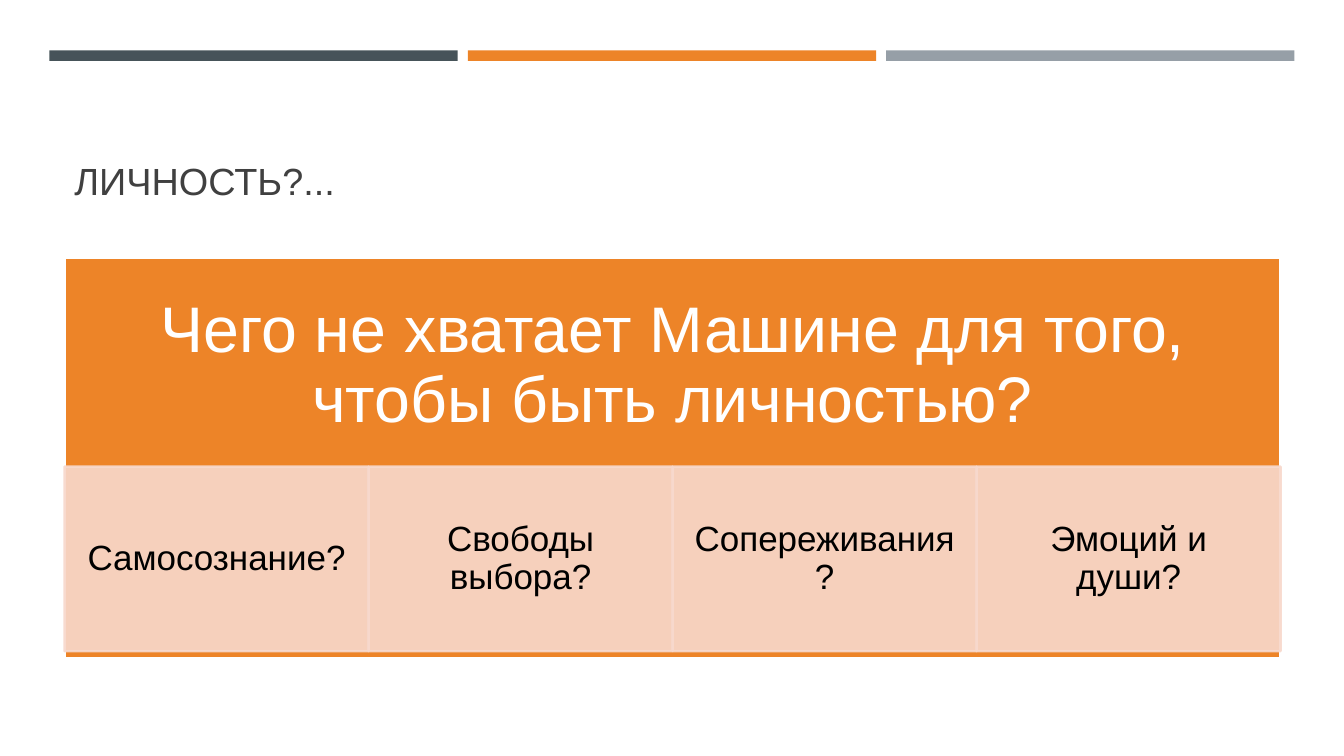
from lxml.etree import SubElement
from pptx import Presentation
from pptx.dml.color import RGBColor
from pptx.enum.shapes import MSO_SHAPE
from pptx.enum.text import MSO_ANCHOR, PP_ALIGN
from pptx.oxml.ns import qn
from pptx.util import Inches, Pt


def color(hex_code):
    return RGBColor.from_string(hex_code)


def set_alpha(element, percent):
    """Make the solid colours inside an element partly transparent."""
    for rgb in element.iter(qn("a:srgbClr")):
        SubElement(rgb, qn("a:alpha")).set("val", str(percent * 1000))


class SlideBuilder:
    """Places elements by percent of the slide's width and height."""

    font = "Arial"
    slate, orange, grey = "465359", "ED8428", "969FA7"
    peach, white, black, charcoal = "F8D9CD", "FFFFFF", "000000", "404040"

    def __init__(self, deck):
        self.deck = deck
        self.slide = deck.slides.add_slide(deck.slide_layouts[6])

    def area(self, left, top, width, height):
        across, down = self.deck.slide_width / 100, self.deck.slide_height / 100
        return (round(left * across), round(top * down),
                round(width * across), round(height * down))

    def block(self, area, fill, line=None, alpha=None):
        block = self.slide.shapes.add_shape(MSO_SHAPE.RECTANGLE, *self.area(*area))
        block.shadow.inherit = False
        block.fill.solid()
        block.fill.fore_color.rgb = color(fill)
        if line:
            block.line.width = Pt(1.75)
            block.line.color.rgb = color(line)
        else:
            block.line.fill.background()
        if alpha:
            set_alpha(block.element.spPr, alpha)
        return block

    def text_box(self, area):
        return self.slide.shapes.add_textbox(*self.area(*area))

    def label(self, holder, text, size, text_color, insets=(0.1, 0.05),
              align=PP_ALIGN.CENTER, anchor=MSO_ANCHOR.MIDDLE):
        frame = holder.text_frame
        frame.text = text
        frame.word_wrap = True
        frame.vertical_anchor = anchor
        frame.margin_left = frame.margin_right = Inches(insets[0])
        frame.margin_top = frame.margin_bottom = Inches(insets[1])
        paragraph = frame.paragraphs[0]
        paragraph.alignment = align
        paragraph.line_spacing = 0.9
        font = paragraph.runs[0].font
        font.name, font.size = self.font, Pt(size)
        font.color.rgb = color(text_color)


def main():
    deck = Presentation()
    deck.slide_width, deck.slide_height = Inches(13.33), Inches(7.5)
    page = SlideBuilder(deck)
    margin, content_width = 4.8, 90.48

    # Three accent bars across the top
    for index, accent in enumerate((page.slate, page.orange, page.grey)):
        page.block((3.68 + index * 31.13, 6.67, 30.38, 1.4), accent)

    # Title
    title = page.text_box((margin, 10.27, content_width, 17.33))
    page.label(title, "ЛИЧНОСТЬ?...", 27, page.charcoal,
               align=PP_ALIGN.LEFT, anchor=MSO_ANCHOR.BOTTOM)

    # Orange panel with the main question
    page.block((margin, 34.13, content_width, 52.93), page.orange, page.white)
    question = page.text_box((margin, 34.13, content_width, 28.67))
    page.label(question, "Чего не хватает Машине для того, чтобы быть личностью?",
               46, page.white, insets=(0.36, 0.36))

    # Row of possible answers
    answers = ("Самосознание?", "Свободы выбора?", "Сопереживания?", "Эмоций и души?")
    column = content_width / len(answers)
    for index, answer in enumerate(answers):
        cell = page.block((margin + index * column, 61.73, column, 24.4),
                          page.peach, page.peach, alpha=90)
        page.label(cell, answer, 25, page.black, insets=(0.19, 0.03))

    deck.save("out.pptx")


if __name__ == "__main__":
    main()
